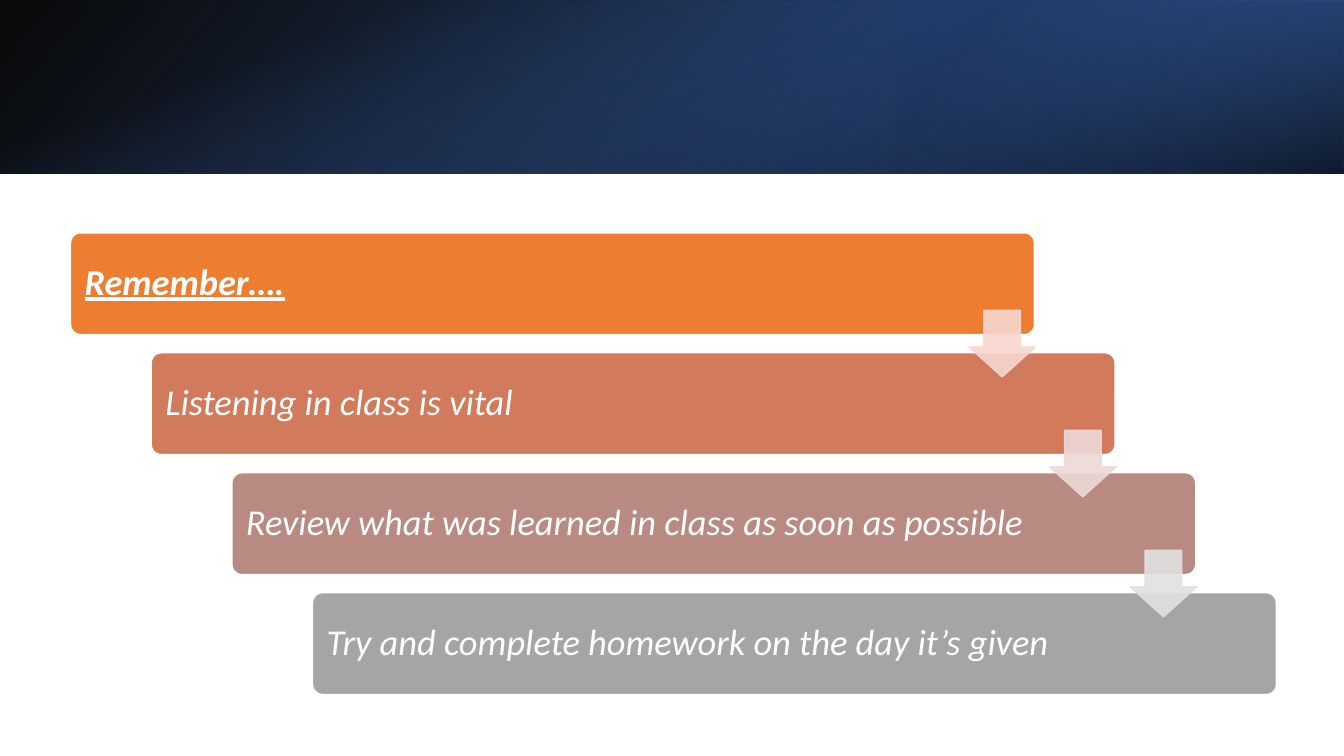
from lxml import etree
from pptx import Presentation
from pptx.dml.color import RGBColor
from pptx.enum.shapes import MSO_SHAPE
from pptx.enum.text import MSO_ANCHOR, PP_ALIGN
from pptx.oxml.ns import qn
from pptx.util import Inches, Pt

RECT, ROUND, ARROW = MSO_SHAPE.RECTANGLE, MSO_SHAPE.ROUNDED_RECTANGLE, MSO_SHAPE.DOWN_ARROW
MIDDLE, LEFT = MSO_ANCHOR.MIDDLE, PP_ALIGN.LEFT

COLORS = {
    "white": "FFFFFF", "black": "000000",
    "blue": "4472C4", "mid_blue": "2F5597", "navy": "203864",
    "bars": ["ED7D31", "D17B5C", "B98A82", "A5A5A5"],
    "arrows": ["F8D7CE", "EDD9D7", "E1E1E1"],
}

prs = Presentation()
prs.slide_width, prs.slide_height = Inches(13.33), Inches(7.5)
s = prs.slides.add_slide(prs.slide_layouts[6])


def add_box(kind, x, y, w, h, fill=None, line=None, alpha=None, adj=(),
            text="", size=26, bold=False, underline=False):
    sp = s.shapes.add_shape(kind, Inches(x), Inches(y), Inches(w), Inches(h))
    sp.shadow.inherit = False
    for i, value in enumerate(adj):
        sp.adjustments[i] = value
    if fill:
        sp.fill.solid()
        sp.fill.fore_color.rgb = RGBColor.from_string(fill)
    if line:
        sp.line.color.rgb = RGBColor.from_string(line)
        sp.line.width = Pt(1)
    else:
        sp.line.fill.background()
    if alpha:
        for clr in sp._element.spPr.iter(qn("a:srgbClr")):
            etree.SubElement(clr, qn("a:alpha"), val=str(alpha * 1000))
    if text:
        tf = sp.text_frame
        tf.word_wrap = True
        tf.vertical_anchor = MIDDLE
        tf.margin_left = tf.margin_right = tf.margin_top = tf.margin_bottom = Inches(0.11)
        p = tf.paragraphs[0]
        p.alignment, p.line_spacing = LEFT, 0.9
        r = p.add_run()
        r.text = text
        r.font.name, r.font.size = "Calibri", Pt(size)
        r.font.bold, r.font.italic, r.font.underline = bold, True, underline
        r.font.color.rgb = RGBColor.from_string(COLORS["white"])
    return sp


# Header band: three overlaid gradients, stops as (position, colour, opacity)
HEADER = [
    (0, 0, 13.33, 1.72, 0, True, 140, [(0, "black", 96), (100, "mid_blue", 100)]),
    (8.89, 0, 4.44, 1.72, 180, True, 320, [(19, "navy", 68), (100, "blue", 79)]),
    (5.8, -5.8, 1.72, 13.33, 90, False, 340, [(23, "blue", 0), (99, "black", 74)]),
]
for x, y, w, h, rotation, flip, angle, stops in HEADER:
    sp = add_box(RECT, x, y, w, h)
    sp.rotation = rotation
    if flip:
        sp._element.spPr.find(qn("a:xfrm")).set("flipH", "1")
    sp.fill.gradient()
    grad = sp._element.spPr.find(qn("a:gradFill"))
    for child in list(grad):
        grad.remove(child)
    grad.set("rotWithShape", "1")
    gs_lst = etree.SubElement(grad, qn("a:gsLst"))
    for pos, name, opacity in stops:
        gs = etree.SubElement(gs_lst, qn("a:gs"), pos=str(pos * 1000))
        clr = etree.SubElement(gs, qn("a:srgbClr"), val=COLORS[name])
        etree.SubElement(clr, qn("a:alpha"), val=str(opacity * 1000))
    etree.SubElement(grad, qn("a:lin"), ang=str(angle * 60000), scaled="0")

# Staircase of advice bars
STEP_X, STEP_Y = 0.8, 1.19
ADVICE = [
    "Remember….",
    "Listening in class is vital",
    "Review what was learned in class as soon as possible",
    "Try and complete homework on the day it’s given",
]
for i, (text, color) in enumerate(zip(ADVICE, COLORS["bars"])):
    add_box(ROUND, 0.7 + i * STEP_X, 2.31 + i * STEP_Y, 9.56, 1.01, fill=color,
            line=COLORS["white"], adj=[0.1], text=text, bold=i == 0, underline=i == 0)

# Arrows from each bar to the next
for i, color in enumerate(COLORS["arrows"]):
    add_box(ARROW, 9.61 + i * STEP_X, 3.08 + i * STEP_Y, 0.66, 0.66, fill=color,
            line=color, alpha=90, adj=[0.55, 0.45])

prs.save("out.pptx")
